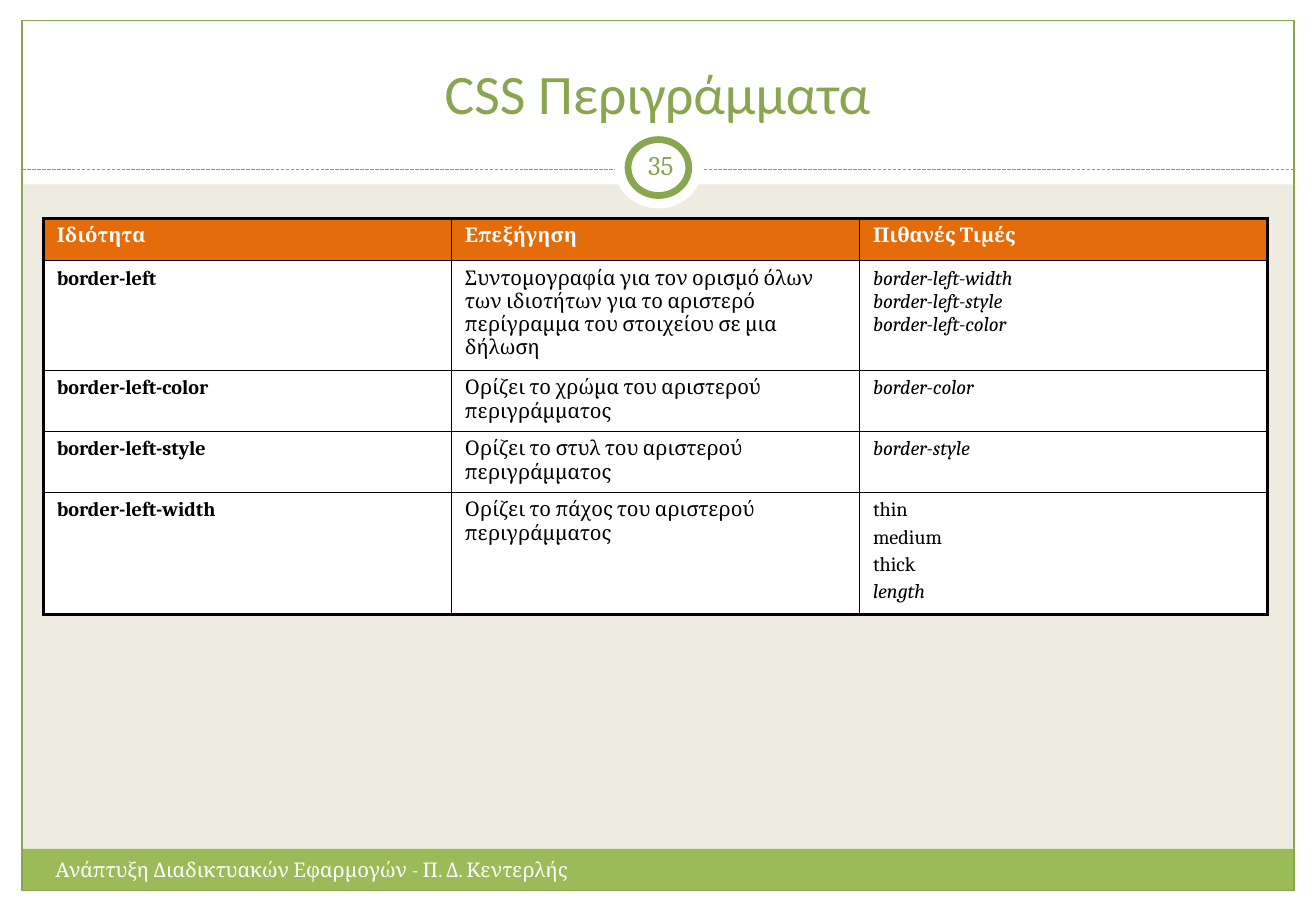
from lxml import etree
from pptx import Presentation
from pptx.dml.color import RGBColor
from pptx.enum.dml import MSO_LINE
from pptx.enum.shapes import MSO_CONNECTOR, MSO_SHAPE
from pptx.enum.text import MSO_ANCHOR, PP_ALIGN
from pptx.oxml.ns import qn
from pptx.util import Cm, Pt

RECT, OVAL = MSO_SHAPE.RECTANGLE, MSO_SHAPE.OVAL
STRAIGHT, DASH = MSO_CONNECTOR.STRAIGHT, MSO_LINE.SQUARE_DOT
LEFT, CENTER = PP_ALIGN.LEFT, PP_ALIGN.CENTER
TOP, MIDDLE, BOTTOM = MSO_ANCHOR.TOP, MSO_ANCHOR.MIDDLE, MSO_ANCHOR.BOTTOM

COLORS = {
    "beige": "EEECE1", "white": "FFFFFF", "black": "000000",
    "green": "9BBB59", "dark_green": "89A54F", "orange": "E46C0A",
}
WIDTH, HEIGHT = 27.51, 19.05
EDGE_X, EDGE_Y = 0.46, 0.43
FRAME_W, FRAME_H = WIDTH - 2 * EDGE_X, HEIGHT - 2 * EDGE_Y

HEADINGS = ["Ιδιότητα", "Επεξήγηση", "Πιθανές Τιμές"]
PROPERTIES = [
    ["border-left",
     "Συντομογραφία για τον ορισμό όλων των ιδιοτήτων για το αριστερό "
     "περίγραμμα του στοιχείου σε μια δήλωση",
     "border-left-width\vborder-left-style\vborder-left-color"],
    ["border-left-color", "Ορίζει το χρώμα του αριστερού περιγράμματος", "border-color"],
    ["border-left-style", "Ορίζει το στυλ του αριστερού περιγράμματος", "border-style"],
    ["border-left-width", "Ορίζει το πάχος του αριστερού περιγράμματος",
     "thin\nmedium\nthick\nlength"],
]
KEYWORDS = {"thin", "medium", "thick"}
ROW_HEIGHTS = [0.88, 2.18, 1.23, 1.23, 2.45]


def rgb(name):
    return RGBColor.from_string(COLORS[name])


class SlideBuilder:
    def __init__(self, slide, font):
        self.slide = slide
        self.font = font

    def background(self, color):
        fill = self.slide.background.fill
        fill.solid()
        fill.fore_color.rgb = rgb(color)

    def shape(self, kind, x, y, w, h, fill=None, line=None, weight=0.75):
        item = self.slide.shapes.add_shape(kind, Cm(x), Cm(y), Cm(w), Cm(h))
        item.shadow.inherit = False
        if fill:
            item.fill.solid()
            item.fill.fore_color.rgb = rgb(fill)
        else:
            item.fill.background()
        if line:
            item.line.color.rgb = rgb(line)
            item.line.width = Pt(weight)
        else:
            item.line.fill.background()

    def dashed_line(self, x1, x2, y, color):
        rule = self.slide.shapes.add_connector(STRAIGHT, Cm(x1), Cm(y), Cm(x2), Cm(y))
        rule.line.color.rgb = rgb(color)
        rule.line.width = Pt(0.75)
        rule.line.dash_style = DASH
        etree.SubElement(rule._element.spPr, qn("a:effectLst"))

    def style(self, run, size, color, font=None, bold=False, italic=False):
        run.font.name = font or self.font
        run.font.size = Pt(size)
        run.font.color.rgb = rgb(color)
        run.font.bold = bold
        run.font.italic = italic

    def text(self, words, x, y, w, h, size, color, font=None,
             align=LEFT, anchor=TOP, inset=None):
        box = self.slide.shapes.add_textbox(Cm(x), Cm(y), Cm(w), Cm(h))
        frame = box.text_frame
        frame.word_wrap = True
        frame.vertical_anchor = anchor
        if inset is not None:
            frame.margin_left = frame.margin_right = Cm(inset)
            frame.margin_top = frame.margin_bottom = Cm(inset)
        frame.text = words
        paragraph = frame.paragraphs[0]
        paragraph.alignment = align
        self.style(paragraph.runs[0], size, color, font)

    def borders(self, cell, weights):
        """Draw the left, right, top and bottom borders, weights in points."""
        props = cell._tc.get_or_add_tcPr()
        for side, weight in zip("LRTB", weights):
            line = etree.SubElement(props, qn(f"a:ln{side}"), w=str(Pt(weight)))
            fill = etree.SubElement(line, qn("a:solidFill"))
            etree.SubElement(fill, qn("a:srgbClr"), val=COLORS["black"])

    def table(self, rows, x, y, column_width, heights):
        last_row, last_column = len(rows) - 1, len(rows[0]) - 1
        table = self.slide.shapes.add_table(
            len(rows), len(rows[0]), Cm(x), Cm(y),
            Cm(column_width * len(rows[0])), Cm(sum(heights))).table
        table.first_row = table.horz_banding = False
        for column in table.columns:
            column.width = Cm(column_width)
        for r, (row, height) in enumerate(zip(rows, heights)):
            table.rows[r].height = Cm(height)
            for c, words in enumerate(row):
                cell = table.cell(r, c)
                outer = (c == 0, c == last_column, r == 0, r == last_row)
                self.borders(cell, [2.25 if edge else 1 for edge in outer])
                self.cell(cell, words, r == 0, c == 0, c == last_column)

    def cell(self, cell, words, heading, name, value):
        cell.fill.solid()
        cell.fill.fore_color.rgb = rgb("orange" if heading else "white")
        cell.margin_left = cell.margin_right = Cm(0.28)
        cell.margin_top = cell.margin_bottom = Cm(0.13)
        cell.text_frame.text = words
        for paragraph in cell.text_frame.paragraphs:
            paragraph.space_before = Pt(2.4)
            for run in paragraph.runs:
                self.style(run, 12, "white" if heading else "black",
                           bold=heading or name,
                           italic=value and not heading and run.text not in KEYWORDS)


def main():
    deck = Presentation()
    deck.slide_width, deck.slide_height = Cm(WIDTH), Cm(HEIGHT)
    page = SlideBuilder(deck.slides.add_slide(deck.slide_layouts[6]), "Cambria")
    page.background("beige")

    page.shape(RECT, 0, HEIGHT - EDGE_Y, WIDTH, EDGE_Y, "white")
    page.shape(RECT, 0, 0, WIDTH, 3.86, "white")
    for margin_x in (0, WIDTH - EDGE_X):
        page.shape(RECT, margin_x, 0, EDGE_X, HEIGHT, "white")
    page.shape(RECT, EDGE_X, 17.75, FRAME_W, 0.87, "green")
    page.shape(RECT, EDGE_X, EDGE_Y, FRAME_W, FRAME_H, line="dark_green")
    page.dashed_line(EDGE_X, WIDTH - EDGE_X, 3.55, "dark_green")
    page.shape(OVAL, 12.85, 2.66, 1.83, 1.7, "white")
    page.shape(OVAL, 13.13, 2.92, 1.27, 1.17, "white", "dark_green", 4)

    page.text("CSS Περιγράμματα", 0.91, 0.64, 25.68, 2.11, 33, "dark_green",
              "Calibri", CENTER, BOTTOM)
    page.text("Ανάπτυξη Διαδικτυακών Εφαρμογών - Π. Δ. Κεντερλής",
              0.91, 17.81, 12.85, 1.02, 12, "white")
    page.text("35", 13.13, 2.84, 1.37, 1.22, 16, "dark_green",
              align=CENTER, anchor=MIDDLE, inset=0.13)
    page.table([HEADINGS] + PROPERTIES, 0.91, 4.57, 8.53, ROW_HEIGHTS)
    deck.save("out.pptx")


if __name__ == "__main__":
    main()
